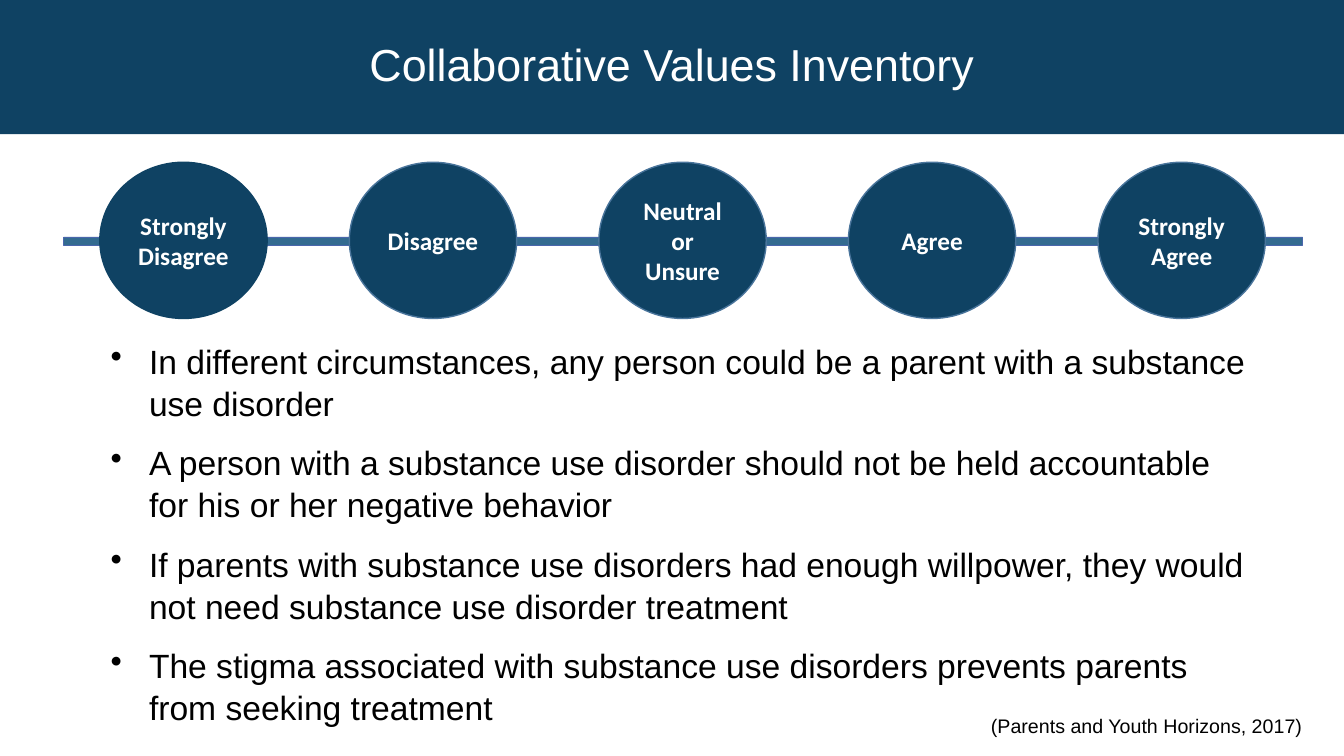
from dataclasses import dataclass

from lxml.etree import SubElement
from pptx import Presentation
from pptx.dml.color import RGBColor
from pptx.enum.shapes import MSO_SHAPE
from pptx.enum.text import MSO_ANCHOR, PP_ALIGN
from pptx.oxml.ns import qn
from pptx.util import Inches, Pt

COLORS = {
    "navy": "0F4263",
    "rail": "336B90",
    "edge": "4A66AC",
    "ring": "49749B",
    "white": "FFFFFF",
    "black": "000000",
}


@dataclass
class Stop:
    label: str
    ring: str = "ring"


STOPS = [
    Stop("Strongly Disagree", ring="navy"),
    Stop("Disagree"),
    Stop("Neutral or Unsure"),
    Stop("Agree"),
    Stop("Strongly Agree"),
]
FIRST, STEP = 0.99, 2.475

POINTS = [
    "In different circumstances, any person could be a parent with a substance use disorder",
    "A person with a substance use disorder should not be held accountable "
    "for his or her negative behavior",
    "If parents with substance use disorders had enough willpower, they would "
    "not need substance use disorder treatment",
    "The stigma associated with substance use disorders prevents parents from seeking treatment",
]


def color(name: str) -> RGBColor:
    return RGBColor.from_string(COLORS[name])


def place(shape, left: float, top: float, width: float, height: float) -> None:
    shape.left, shape.top = Inches(left), Inches(top)
    shape.width, shape.height = Inches(width), Inches(height)


def write(shape, *texts: str, size: float, font: str = "Arial", ink: str = "black",
          bold: bool = False, align=PP_ALIGN.LEFT, anchor=MSO_ANCHOR.TOP,
          spacing: float = 1.0, gap: float = 0, bullet: bool = False) -> None:
    """Fill a shape with one paragraph per text."""
    frame = shape.text_frame
    frame.word_wrap = True
    frame.vertical_anchor = anchor
    frame.text = "\n".join(texts)
    for para in frame.paragraphs:
        para.alignment = align
        para.line_spacing = spacing
        para.space_before = para.space_after = Pt(gap)
        para.font.size, para.font.name, para.font.bold = Pt(size), font, bold
        para.font.color.rgb = color(ink)
        if bullet:
            props = para._p.get_or_add_pPr()
            props.set("marL", str(Inches(0.38)))
            props.set("indent", str(-Inches(0.38)))
            mark = SubElement(props, qn("a:buChar"))
            mark.set("char", "•")
            # The bullet must come before the run defaults
            props.find(qn("a:defRPr")).addprevious(mark)


def draw(slide, kind, box: tuple[float, ...], fill: str, line: str, weight: float):
    shape = slide.shapes.add_shape(kind, *map(Inches, box))
    shape.shadow.inherit = False
    shape.fill.solid()
    shape.fill.fore_color.rgb = color(fill)
    shape.line.color.rgb = color(line)
    shape.line.width = Pt(weight)
    return shape


def main() -> None:
    deck = Presentation()
    deck.slide_width, deck.slide_height = Inches(13.33), Inches(7.5)
    slide = deck.slides.add_slide(deck.slide_layouts[5])

    # Title band
    title = slide.shapes.title
    place(title, 0, 0, 13.33, 1.33)
    title.fill.solid()
    title.fill.fore_color.rgb = color("navy")
    write(title, "Collaborative Values Inventory", size=32, ink="white",
          align=PP_ALIGN.CENTER, anchor=MSO_ANCHOR.MIDDLE, spacing=0.9)

    # Rating scale
    draw(slide, MSO_SHAPE.RECTANGLE, (0.63, 2.35, 12.29, 0.08), "rail", "edge", 0.5)
    for index, stop in enumerate(STOPS):
        box = (FIRST + index * STEP, 1.61, 1.66, 1.55)
        disc = draw(slide, MSO_SHAPE.OVAL, box, "navy", stop.ring, 1)
        write(disc, stop.label, size=18, font="Calibri", ink="white", bold=True,
              align=PP_ALIGN.CENTER, anchor=MSO_ANCHOR.MIDDLE)

    # Statements to rate
    body = slide.shapes.add_textbox(*map(Inches, (1, 3.31, 11.5, 3.85)))
    write(body, *POINTS, size=24, spacing=1.05, gap=6, bullet=True)

    # Citation
    cite = slide.shapes.add_textbox(*map(Inches, (9.73, 7.03, 3.6, 0.34)))
    write(cite, "(Parents and Youth Horizons, 2017)", size=14)

    deck.save("out.pptx")


if __name__ == "__main__":
    main()
